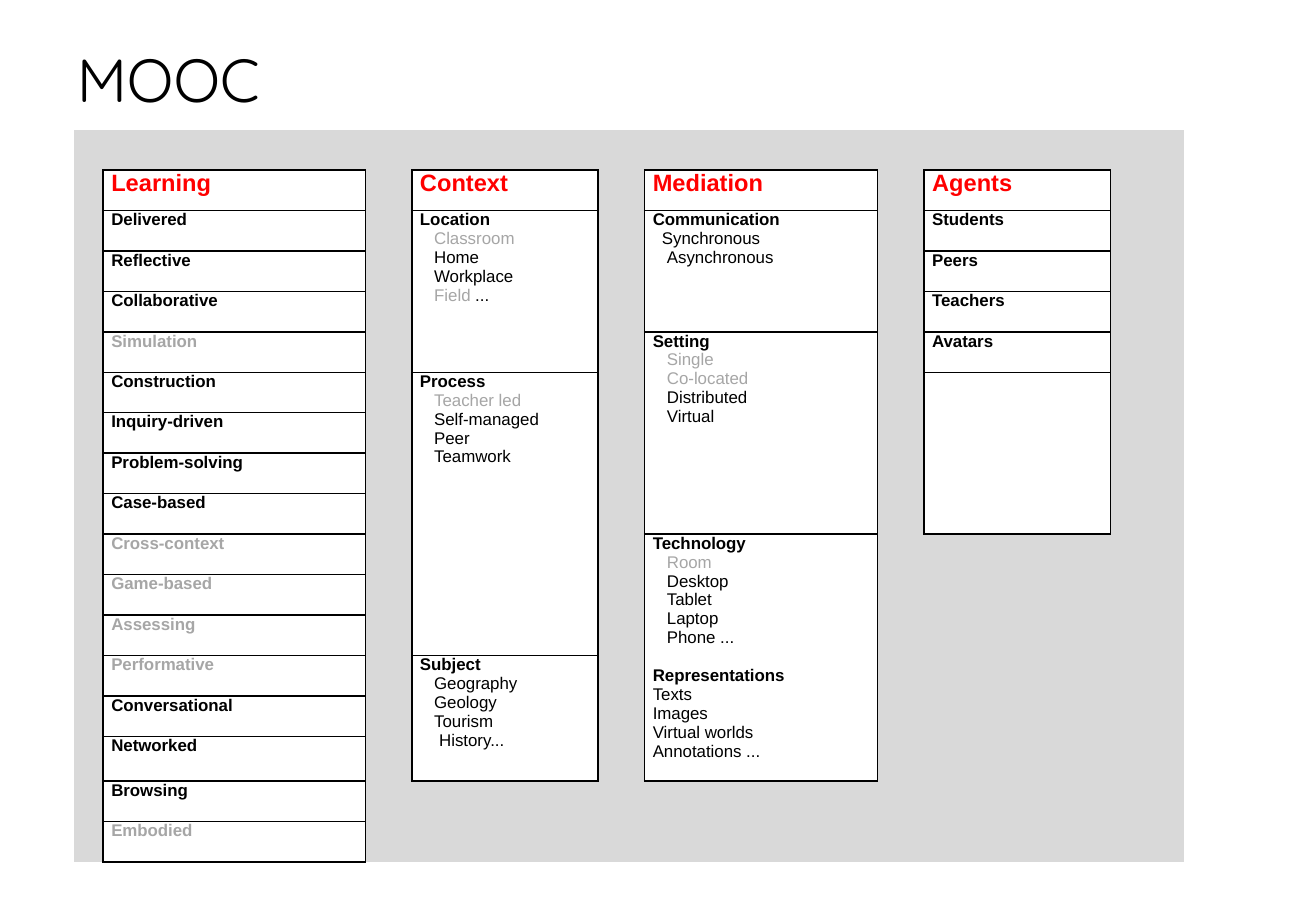
from dataclasses import dataclass

from lxml.etree import SubElement
from pptx import Presentation
from pptx.dml.color import RGBColor
from pptx.enum.text import MSO_ANCHOR
from pptx.oxml.ns import qn
from pptx.util import Emu, Pt

EMU_PER_PX = 7620
PLAIN_TABLE_STYLE = "{2D5ABB26-0587-4C30-8999-92F81FD0307C}"


@dataclass(frozen=True)
class Theme:
    ink: str = "000000"
    muted: str = "A6A6A6"
    accent: str = "FF0000"
    panel: str = "D9D9D9"
    paper: str = "FFFFFF"
    title_font: str = "Quicksand"
    body_font: str = "Arial"
    title_size: int = 36
    heading_size: int = 14
    body_size: int = 10
    border_width: int = 1
    inset: int = 8


@dataclass(frozen=True)
class Line:
    text: str
    muted: bool = False
    bold: bool = False
    indent: int = 0
    space_before: float = 0
    tail: str = ""


def px(length):
    return Emu(length * EMU_PER_PX)


def topic(text, muted=False, space_before=0):
    return Line(text, muted, bold=True, space_before=space_before)


def item(text, muted=False, indent=14, tail=""):
    return Line(text, muted, indent=indent, tail=tail)


class SlideBuilder:
    def __init__(self, presentation, theme):
        self.theme = theme
        self.slide = presentation.slides.add_slide(presentation.slide_layouts[6])

    def add_run(self, paragraph, text, font, size, color, bold=False):
        run = paragraph.add_run()
        run.text = text
        run.font.name = font
        run.font.size = Pt(size)
        run.font.bold = bold
        run.font.color.rgb = RGBColor.from_string(color)

    def add_title(self, text, left, top, width, height):
        shape = self.slide.shapes.add_textbox(px(left), px(top), px(width), px(height))
        shape.text_frame.word_wrap = True
        self.add_run(shape.text_frame.paragraphs[0], text, self.theme.title_font,
                     self.theme.title_size, self.theme.ink)

    def add_panel_table(self, left, top, widths, heights):
        shape = self.slide.shapes.add_table(len(heights), len(widths), px(left), px(top),
                                            px(sum(widths)), px(sum(heights)))
        table = shape.table
        properties = table._tbl.tblPr
        properties.find(qn("a:tableStyleId")).text = PLAIN_TABLE_STYLE
        table.first_row = table.horz_banding = False
        for column, width in zip(table.columns, widths):
            column.width = px(width)
        for row, height in zip(table.rows, heights):
            row.height = px(height)
        for cell in table.iter_cells():
            cell.margin_left = cell.margin_right = px(self.theme.inset)
            cell.margin_top = cell.margin_bottom = 0
            cell.vertical_anchor = MSO_ANCHOR.TOP
            self.fill_cell(cell, self.theme.panel)
        return table

    def fill_cell(self, cell, color):
        cell.fill.solid()
        cell.fill.fore_color.rgb = RGBColor.from_string(color)

    def add_borders(self, cell):
        properties = cell._tc.get_or_add_tcPr()
        for side in ("L", "R", "T", "B"):
            border = SubElement(properties, qn(f"a:ln{side}"),
                                w=str(Pt(self.theme.border_width)))
            fill = SubElement(border, qn("a:solidFill"))
            SubElement(fill, qn("a:srgbClr"), val=self.theme.ink)

    def add_box(self, table, row, column, span=1):
        for offset in range(span):
            cell = table.cell(row + offset, column)
            cell.fill.background()
            properties = cell._tc.get_or_add_tcPr()
            properties.remove(properties.find(qn("a:noFill")))
            self.add_borders(cell)
            self.fill_cell(cell, self.theme.paper)
        box = table.cell(row, column)
        if span > 1:
            box.merge(table.cell(row + span - 1, column))
        return box

    def add_heading(self, table, row, column, text):
        box = self.add_box(table, row, column)
        self.add_run(box.text_frame.paragraphs[0], text, self.theme.body_font,
                     self.theme.heading_size, self.theme.accent, bold=True)

    def add_lines(self, table, row, column, span, lines):
        theme = self.theme
        frame = self.add_box(table, row, column, span).text_frame
        for index, line in enumerate(lines):
            paragraph = frame.add_paragraph() if index else frame.paragraphs[0]
            if line.indent:
                properties = paragraph._p.get_or_add_pPr()
                properties.set("marL", str(px(line.indent)))
                properties.set("indent", "0")
            if line.space_before:
                paragraph.space_before = Pt(line.space_before)
            color = theme.muted if line.muted else theme.ink
            self.add_run(paragraph, line.text, theme.body_font, theme.body_size,
                         color, line.bold)
            if line.tail:
                self.add_run(paragraph, line.tail, theme.body_font, theme.body_size, theme.ink)


MUTED_LEARNING = {"Simulation", "Cross-context", "Game-based", "Assessing",
                  "Performative", "Embodied"}
LEARNING = ["Delivered", "Reflective", "Collaborative", "Simulation", "Construction",
            "Inquiry-driven", "Problem-solving", "Case-based", "Cross-context",
            "Game-based", "Assessing", "Performative", "Conversational", "Networked",
            "Browsing", "Embodied"]
AGENTS = ["Students", "Peers", "Teachers", "Avatars"]

COLUMNS = {
    "Learning": [(1, [topic(name, name in MUTED_LEARNING)]) for name in LEARNING],
    "Context": [
        (4, [topic("Location"), item("Classroom", muted=True), item("Home"),
             item("Workplace"), item("Field", muted=True, tail=" ...")]),
        (7, [topic("Process"), item("Teacher led", muted=True), item("Self-managed"),
             item("Peer"), item("Teamwork")]),
        (3, [topic("Subject"), item("Geography"), item("Geology"), item("Tourism"),
             item("History...", indent=19)]),
    ],
    "Mediation": [
        (3, [topic("Communication"), item("Synchronous", indent=9), item("Asynchronous")]),
        (5, [topic("Setting"), item("Single", muted=True), item("Co-located", muted=True),
             item("Distributed"), item("Virtual")]),
        (6, [topic("Technology"), item("Room", muted=True), item("Desktop"),
             item("Tablet"), item("Laptop"), item("Phone ..."),
             topic("Representations", space_before=11.5), item("Texts", indent=0),
             item("Images", indent=0), item("Virtual worlds", indent=0),
             item("Annotations ...", indent=0)]),
    ],
    "Agents": [(1, [topic(name)]) for name in AGENTS] + [(4, [])],
}

COLUMN_WIDTHS = [29, 259, 46, 184, 46, 230, 46, 184, 73]
ROW_HEIGHTS = [40] * 15 + [44] + [40] * 2


def main():
    presentation = Presentation()
    presentation.slide_width = px(1300)
    presentation.slide_height = px(900)
    builder = SlideBuilder(presentation, Theme())
    builder.add_title("MOOC", 64, 35, 1096, 104)
    table = builder.add_panel_table(73, 128, COLUMN_WIDTHS, ROW_HEIGHTS)
    for index, (heading, boxes) in enumerate(COLUMNS.items()):
        column = 2 * index + 1
        builder.add_heading(table, 1, column, heading)
        row = 2
        for span, lines in boxes:
            builder.add_lines(table, row, column, span, lines)
            row += span
    presentation.save("out.pptx")


if __name__ == "__main__":
    main()
